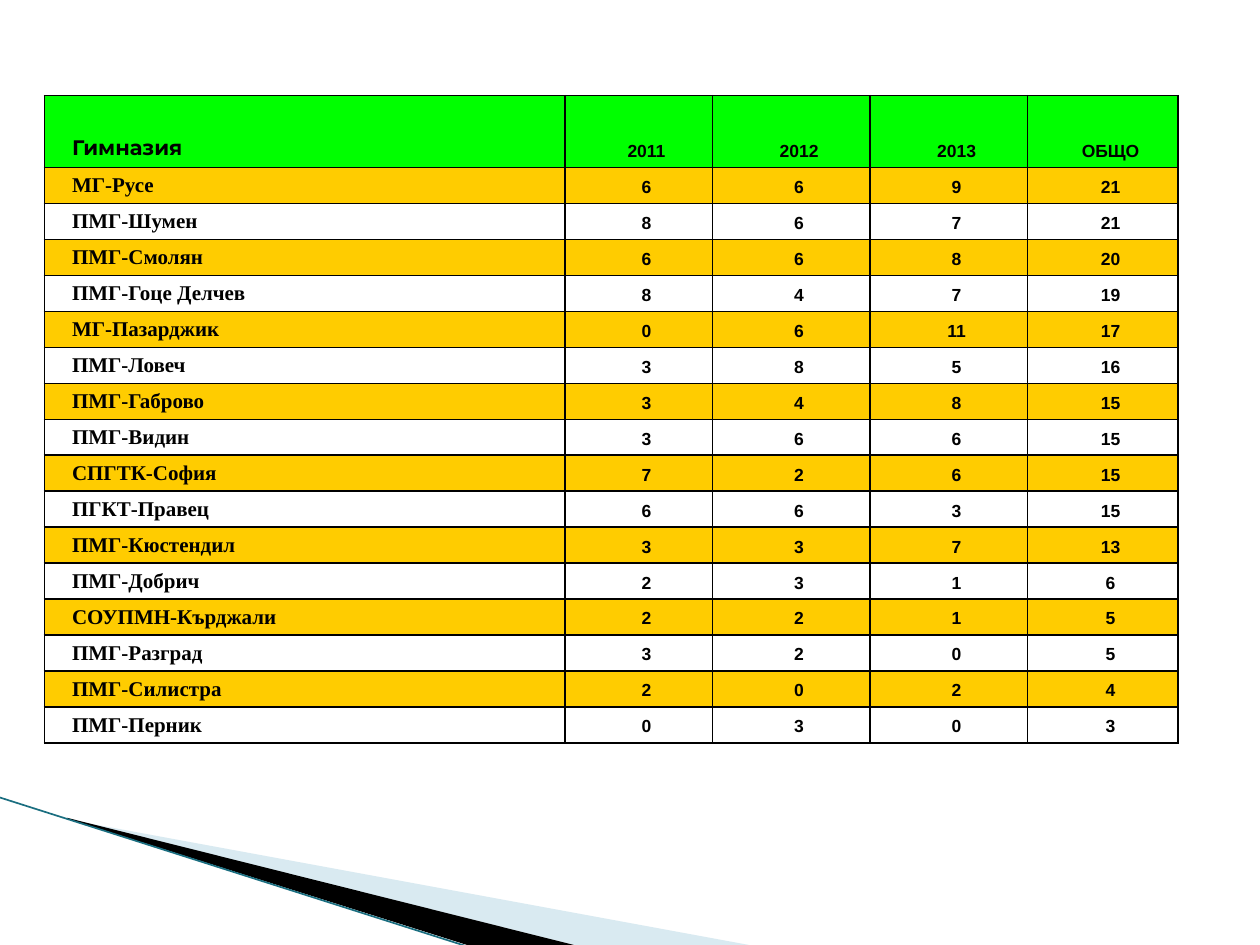
from lxml import etree
from pptx import Presentation, util as u
from pptx.dml.color import RGBColor
from pptx.enum import shapes, text
from pptx.oxml import ns

Pt = u.Pt


def paint(target, color):
    """Give a fill a solid colour."""
    target.solid()
    target.fore_color.rgb = RGBColor.from_string(color)


def add_border(cell, color, width):
    """Outline all four sides of a cell; lines must precede its fill."""
    properties = cell._tc.get_or_add_tcPr()
    for position, side in enumerate(("lnL", "lnR", "lnT", "lnB")):
        line = etree.Element(ns.qn(f"a:{side}"), w=str(Pt(width)))
        fill = etree.SubElement(line, ns.qn("a:solidFill"))
        etree.SubElement(fill, ns.qn("a:srgbClr"), val=color)
        properties.insert(position, line)


presentation = Presentation()
presentation.slide_width, presentation.slide_height = Pt(720), Pt(540)
slide = presentation.slides.add_slide(presentation.slide_layouts[6])

# Corner wedges: outline, colour, opacity in percent
wedges = [
    ([(39.6, 468.5), (428, 540), (328, 540), (39.6, 468)], "A0CBDC", 40),
    ([(38.2, 467.3), (328, 540), (267, 540), (38.9, 468)], "000000", 100),
]
for points, color, opacity in wedges:
    corners = [(Pt(x), Pt(y)) for x, y in points]
    builder = slide.shapes.build_freeform(*corners[0], scale=1.0)
    builder.add_line_segments(corners[1:], close=True)
    wedge = builder.convert_to_shape()
    wedge.shadow.inherit = False
    paint(wedge.fill, color)
    wedge.line.fill.background()
    if opacity < 100:
        color_element = wedge._element.spPr.find(".//" + ns.qn("a:srgbClr"))
        etree.SubElement(color_element, ns.qn("a:alpha"), val=str(opacity * 1000))

edge = slide.shapes.add_connector(
    shapes.MSO_CONNECTOR.STRAIGHT, Pt(-0.5), Pt(455.6), Pt(267.5), Pt(541))
paint(edge.line.fill, "1A6E80")
edge.line.width = Pt(0.95)
etree.SubElement(edge._element.spPr, ns.qn("a:effectLst"))

header = ("Гимназия", "2011", "2012", "2013", "ОБЩО")
results = [
    ("МГ-Русе", 6, 6, 9, 21),
    ("ПМГ-Шумен", 8, 6, 7, 21),
    ("ПМГ-Смолян", 6, 6, 8, 20),
    ("ПМГ-Гоце Делчев", 8, 4, 7, 19),
    ("МГ-Пазарджик", 0, 6, 11, 17),
    ("ПМГ-Ловеч", 3, 8, 5, 16),
    ("ПМГ-Габрово", 3, 4, 8, 15),
    ("ПМГ-Видин", 3, 6, 6, 15),
    ("СПГТК-София", 7, 2, 6, 15),
    ("ПГКТ-Правец", 6, 6, 3, 15),
    ("ПМГ-Кюстендил", 3, 3, 7, 13),
    ("ПМГ-Добрич", 2, 3, 1, 6),
    ("СОУПМН-Кърджали", 2, 2, 1, 5),
    ("ПМГ-Разград", 3, 2, 0, 5),
    ("ПМГ-Силистра", 2, 0, 2, 4),
    ("ПМГ-Перник", 0, 3, 0, 3),
]
rows = [header, *results]
column_widths = [297.5, 84.5, 90, 90, 86]
row_heights = [41.14] + [20.57] * len(results)

table = slide.shapes.add_table(
    len(rows), len(header), Pt(25.3), Pt(54.6),
    Pt(sum(column_widths)), Pt(sum(row_heights))).table
table.first_row = table.horz_banding = False
for column, width in zip(table.columns, column_widths):
    column.width = Pt(width)

for row_index, values in enumerate(rows):
    table.rows[row_index].height = Pt(row_heights[row_index])
    if row_index == 0:
        row_color, name_font = "00FF00", "Montserrat"
    else:
        row_color = "FFCC00" if row_index % 2 else "FFFFFF"
        name_font = "Times New Roman"
    for column_index, value in enumerate(values):
        cell = table.cell(row_index, column_index)
        paint(cell.fill, row_color)
        add_border(cell, "000000", 1)
        cell.vertical_anchor = text.MSO_ANCHOR.BOTTOM
        cell.margin_top, cell.margin_bottom = Pt(3), Pt(3.6)
        paragraph = cell.text_frame.paragraphs[0]
        indents = paragraph._p.get_or_add_pPr()
        indents.set("marL", str(Pt(28.8)))
        indents.set("indent", str(Pt(-20.16)))
        run = paragraph.add_run()
        run.text = str(value)
        run.font.bold = True
        paint(run.font.fill, "000000")
        if column_index == 0:
            run.font.name, run.font.size = name_font, Pt(12)
        else:
            paragraph.alignment = text.PP_ALIGN.CENTER
            run.font.name, run.font.size = "Arial", Pt(10)

presentation.save("out.pptx")
